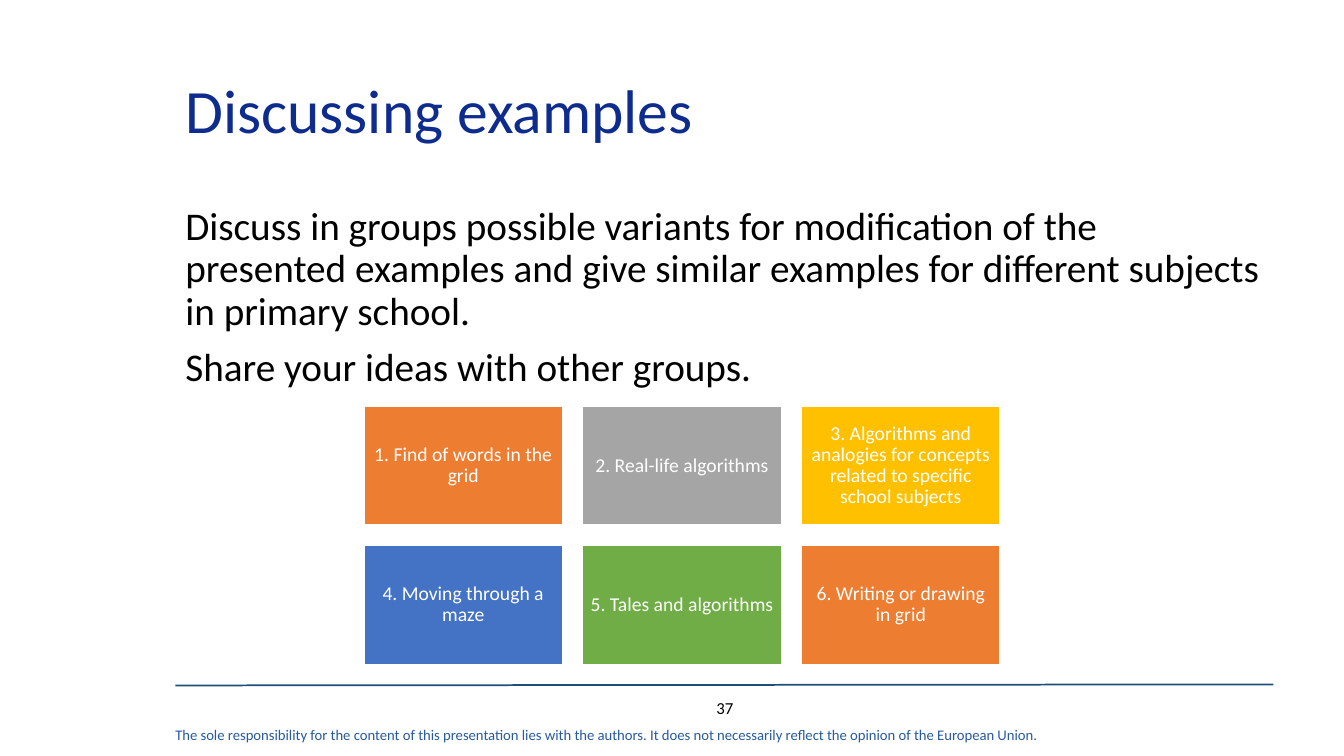
from lxml import etree
from pptx import Presentation
from pptx.dml.color import RGBColor
from pptx.enum.shapes import MSO_CONNECTOR, MSO_SHAPE
from pptx.enum.text import MSO_ANCHOR, PP_ALIGN
from pptx.oxml.ns import qn
from pptx.util import Inches, Pt

RECT = MSO_SHAPE.RECTANGLE
LINE = MSO_CONNECTOR.STRAIGHT
TOP, MIDDLE = MSO_ANCHOR.TOP, MSO_ANCHOR.MIDDLE
LEFT, CENTER = PP_ALIGN.LEFT, PP_ALIGN.CENTER
FONT = "Calibri"
COLORS = {
    "title": "0E2C8E", "text": "000000", "note": "275A9F", "rule": "1F4E79",
    "white": "FFFFFF", "orange": "ED7D31", "gray": "A5A5A5",
    "gold": "FFC000", "blue": "4472C4", "green": "70AD47",
}
BODY = [
    "Discuss in groups possible variants for modification of the presented "
    "examples and give similar examples for different subjects in primary school.",
    "Share your ideas with other groups.",
]
CARDS = [
    ("1. Find of words in the grid", "orange"),
    ("2. Real-life algorithms", "gray"),
    ("3. Algorithms and analogies for concepts related to specific school subjects", "gold"),
    ("4. Moving through a maze", "blue"),
    ("5. Tales and algorithms", "green"),
    ("6. Writing or drawing in grid", "orange"),
]
NOTE = ("The sole responsibility for the content of this presentation lies with the "
        "authors. It does not necessarily reflect the opinion of the European Union.")


def rgb(name):
    return RGBColor.from_string(COLORS[name])


def write(shape, lines, size, color, align=LEFT, anchor=MIDDLE, space=1.0):
    """Fill a shape with one paragraph per line of text."""
    frame = shape.text_frame
    frame.word_wrap = True
    frame.vertical_anchor = anchor
    for i, line in enumerate(lines):
        para = frame.add_paragraph() if i else frame.paragraphs[0]
        para.alignment = align
        para.line_spacing = space
        if i:
            para.space_before = Pt(10)
        run = para.add_run()
        run.text = line
        run.font.name = FONT
        run.font.size = Pt(size)
        run.font.color.rgb = rgb(color)


def add_text(slide, box, lines, size, color, **style):
    shape = slide.shapes.add_textbox(*map(Inches, box))
    write(shape, lines, size, color, **style)


def add_card(slide, box, label, fill):
    card = slide.shapes.add_shape(RECT, *map(Inches, box))
    card.shadow.inherit = False
    card.fill.solid()
    card.fill.fore_color.rgb = rgb(fill)
    card.line.color.rgb = rgb("white")
    card.line.width = Pt(1)
    frame = card.text_frame
    frame.margin_left = frame.margin_right = Inches(0.06)
    frame.margin_top = frame.margin_bottom = Inches(0.06)
    write(card, [label], 14, "white", align=CENTER, space=0.9)


def add_grid(slide, box, cols=3, gap=0.2):
    """Lay the cards out in rows with equal gaps inside the box."""
    left, top, width, height = box
    rows = -(-len(CARDS) // cols)
    wide = (width - gap * (cols - 1)) / cols
    high = (height - gap * (rows - 1)) / rows
    for i, (label, fill) in enumerate(CARDS):
        row, col = divmod(i, cols)
        place = (left + col * (wide + gap), top + row * (high + gap), wide, high)
        add_card(slide, place, label, fill)


def add_footer(slide, box):
    """Draw the rule, the page number and the note below it."""
    left, top, width, height = box
    rule = slide.shapes.add_connector(
        LINE, Inches(left), Inches(top + 0.01), Inches(left + width), Inches(top))
    rule.line.color.rgb = rgb("rule")
    rule.line.width = Pt(1.25)
    etree.SubElement(rule._element.spPr, qn("a:effectLst"))
    add_text(slide, (left + 5.15, top + 0.03, 0.6, 0.4), ["37"], 12, "text", align=CENTER)
    add_text(slide, (left - 0.1, top + height - 0.26, 8.97, 0.26), [NOTE], 10.5, "note")


def main():
    deck = Presentation()
    deck.slide_width, deck.slide_height = Inches(13.33), Inches(7.5)
    slide = deck.slides.add_slide(deck.slide_layouts[6])
    add_text(slide, (1.74, 0.4, 9.66, 1.45), ["Discussing examples"], 44, "title", space=0.9)
    add_text(slide, (1.74, 2, 10.89, 4.7), BODY, 28, "text", anchor=TOP, space=0.9)
    add_grid(slide, (3.61, 4.03, 6.31, 2.56))
    add_footer(slide, (1.74, 6.79, 10.89, 0.63))
    deck.save("out.pptx")


if __name__ == "__main__":
    main()
